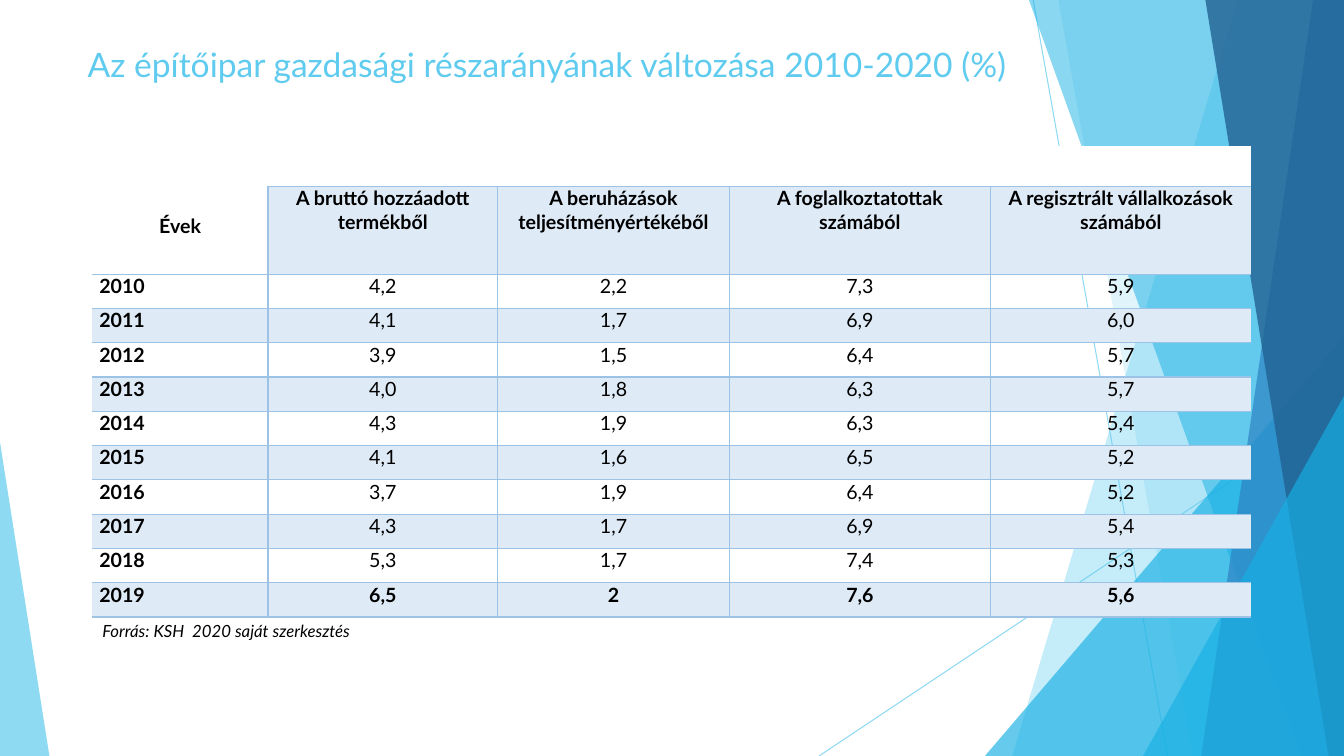
from lxml import etree
from pptx import Presentation
from pptx.dml.color import RGBColor
from pptx.enum.shapes import MSO_CONNECTOR, MSO_SHAPE
from pptx.enum.text import MSO_ANCHOR, PP_ALIGN
from pptx.oxml.ns import qn
from pptx.util import Pt

LINE = MSO_CONNECTOR.STRAIGHT
TRIANGLE = MSO_SHAPE.ISOSCELES_TRIANGLE
TOP, MIDDLE = MSO_ANCHOR.TOP, MSO_ANCHOR.MIDDLE
LEFT, CENTER = PP_ALIGN.LEFT, PP_ALIGN.CENTER

W, H = 960, 540
FONT = "Lato"
PLAIN_TABLE = "{2D5ABB26-0587-4C30-8999-92F81FD0307C}"
COLORS = {"sky": "5FCBEF", "cyan": "17B0E4", "blue": "2E83C3", "navy": "226292",
          "band": "DEEAF6", "grid": "9CC2E5", "white": "FFFFFF", "black": "000000"}

BANDS = [(884, 723, "sky", 36), (756, 852, "sky", 20)]
FRONT_BANDS = [(735, 929.5, "cyan", 50), (938, 858, "blue", 70), (861, 949, "navy", 80)]

HEADERS = ["Évek", "A bruttó hozzáadott termékből", "A beruházások teljesítményértékéből",
           "A foglalkoztatottak számából", "A regisztrált vállalkozások számából"]
SHARES = [
    ("2010", "4,2", "2,2", "7,3", "5,9"),
    ("2011", "4,1", "1,7", "6,9", "6,0"),
    ("2012", "3,9", "1,5", "6,4", "5,7"),
    ("2013", "4,0", "1,8", "6,3", "5,7"),
    ("2014", "4,3", "1,9", "6,3", "5,4"),
    ("2015", "4,1", "1,6", "6,5", "5,2"),
    ("2016", "3,7", "1,9", "6,4", "5,2"),
    ("2017", "4,3", "1,7", "6,9", "5,4"),
    ("2018", "5,3", "1,7", "7,4", "5,3"),
    ("2019", "6,5", "2", "7,6", "5,6"),
]
COL_WIDTHS = [125.5, 164, 165.6, 186.4, 186.4]
ROW_HEIGHTS = [28.8, 62.6] + [24.5] * len(SHARES)


class Deck:
    """Draws styled elements on the current slide."""

    def __init__(self, prs):
        self.s = prs.slides.add_slide(prs.slide_layouts[5])
        self.shapes = self.s.shapes

    def rgb(self, name):
        return RGBColor.from_string(COLORS[name])

    def alpha(self, sp, opacity):
        clr = next(sp._element.spPr.iter(qn("a:srgbClr")))
        etree.SubElement(clr, qn("a:alpha"), val=str(opacity * 1000))

    def tint(self, sp, color, opacity):
        sp.shadow.inherit = False
        sp.fill.solid()
        sp.fill.fore_color.rgb = self.rgb(color)
        sp.line.fill.background()
        self.alpha(sp, opacity)

    def line(self, x1, y1, x2, y2):
        sp = self.shapes.add_connector(LINE, Pt(x1), Pt(y1), Pt(x2), Pt(y2))
        sp.line.color.rgb = self.rgb("sky")
        sp.line.width = Pt(0.75)
        self.alpha(sp, 70)
        etree.SubElement(sp._element.spPr, qn("a:effectLst"))

    def band(self, top_x, bottom_x, color, opacity):
        fb = self.shapes.build_freeform(Pt(top_x), 0)
        fb.add_line_segments([(Pt(W), 0), (Pt(W), Pt(H)), (Pt(bottom_x), Pt(H))])
        self.tint(fb.convert_to_shape(), color, opacity)

    def triangle(self, x, y, w, apex, color, opacity):
        sp = self.shapes.add_shape(TRIANGLE, Pt(x), Pt(y), Pt(w), Pt(H - y))
        sp.adjustments[0] = apex
        self.tint(sp, color, opacity)

    def text(self, tf, text, color="black", align=LEFT, after=0, **fmt):
        p = tf.paragraphs[0]
        p.alignment, p.space_after = align, Pt(after)
        r = p.add_run()
        r.text = text
        r.font.color.rgb = self.rgb(color)
        for name, value in {"name": FONT, **fmt}.items():
            setattr(r.font, name, value)

    def title(self, x, y, w, h, text):
        sp = self.shapes.title
        self.shapes._spTree.append(sp._element)
        sp.left, sp.top, sp.width, sp.height = Pt(x), Pt(y), Pt(w), Pt(h)
        sp.text_frame.vertical_anchor = TOP
        self.text(sp.text_frame, text, "sky", size=Pt(24))

    def note(self, x, y, w, h, text):
        tf = self.shapes.add_textbox(Pt(x), Pt(y), Pt(w), Pt(h)).text_frame
        tf.word_wrap = True
        self.text(tf, text, size=Pt(12), italic=True)

    def borders(self, cell, sides):
        tcPr = cell._tc.get_or_add_tcPr()
        for side, width in sides.items():
            ln = etree.SubElement(tcPr, qn("a:ln" + side), w=str(Pt(width)))
            fill = etree.SubElement(ln, qn("a:solidFill"))
            etree.SubElement(fill, qn("a:srgbClr"), val=COLORS["grid"])

    def cell(self, cell, text, sides, fill, align=CENTER, bold=False):
        self.borders(cell, sides)
        if fill:
            cell.fill.solid()
            cell.fill.fore_color.rgb = self.rgb(fill)
        else:
            cell.fill.background()
        cell.margin_left = cell.margin_right = Pt(5)
        cell.margin_top = cell.margin_bottom = 0
        if text:
            self.text(cell.text_frame, text, align=align, after=6, size=Pt(14), bold=bold)

    def table(self, x, y, rows):
        tbl = self.shapes.add_table(len(rows), len(COL_WIDTHS), Pt(x), Pt(y),
                                    Pt(sum(COL_WIDTHS)), Pt(sum(ROW_HEIGHTS))).table
        tbl.first_row = tbl.horz_banding = False
        tbl._tbl.tblPr.find(qn("a:tableStyleId")).text = PLAIN_TABLE
        for col, width in zip(tbl.columns, COL_WIDTHS):
            col.width = Pt(width)
        for row, height in zip(tbl.rows, ROW_HEIGHTS):
            row.height = Pt(height)
        last_row, last_col = len(rows) - 1, len(COL_WIDTHS) - 1
        for i, row in enumerate(rows):
            for j, text in enumerate(row):
                sides = {}
                if i and j:
                    sides["L"] = 1
                if i and j < last_col:
                    sides["R"] = 1
                if i > 1 or i and j:
                    sides["T"] = 1.5 if i == 1 else 1
                sides["B"] = 1.5 if i == 0 and j else 1
                heading = i < 2 and (i == 0 or j == 0)
                fill = "white" if heading else "band" if i % 2 else None
                self.cell(tbl.cell(i, j), text, sides, fill,
                          LEFT if i > 1 and j == 0 else CENTER,
                          i < 2 or j == 0 or i == last_row)
        years = tbl.cell(0, 0)
        years.merge(tbl.cell(1, 0))
        years.vertical_anchor, years.margin_top = MIDDLE, Pt(23)
        tbl.cell(0, 1).merge(tbl.cell(0, last_col))


def main():
    prs = Presentation()
    prs.slide_width, prs.slide_height = Pt(W), Pt(H)
    deck = Deck(prs)
    deck.line(738, 0, 834, H)
    deck.line(W, 290, 585, H)
    for band in BANDS:
        deck.band(*band)
    deck.triangle(703.5, 240, 256.5, 1, "cyan", 66)
    for band in FRONT_BANDS:
        deck.band(*band)
    deck.triangle(816.5, 283, 143.5, 1, "cyan", 66)
    deck.triangle(0, 316, 35.3, 0, "sky", 70)
    deck.title(55.4, 28, 828, 104.4,
               "Az építőipar gazdasági részarányának változása 2010-2020 (%)")
    header_rows = [HEADERS[:1] + [""] * 4, [""] + HEADERS[1:]]
    deck.table(66, 104.4, header_rows + SHARES)
    deck.note(66, 440, 195, 36, "Forrás: KSH  2020 saját szerkesztés")
    prs.save("out.pptx")


if __name__ == "__main__":
    main()
